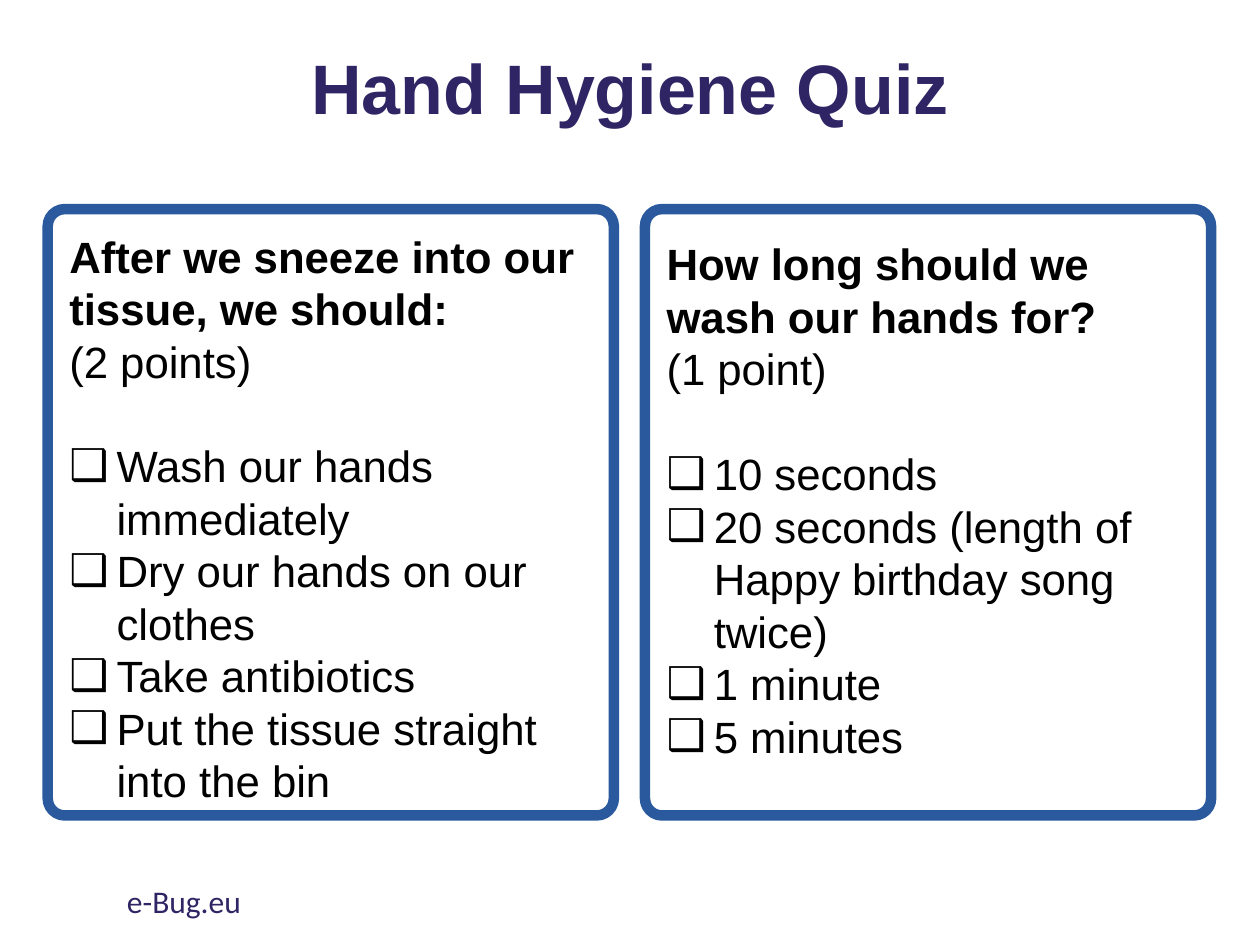
import dataclasses

import lxml.etree
import pptx
import pptx.dml.color
import pptx.enum.shapes
import pptx.enum.text
import pptx.oxml.ns
import pptx.util

Pt = pptx.util.Pt
Anchor = pptx.enum.text.MSO_ANCHOR
Align = pptx.enum.text.PP_ALIGN
AutoSize = pptx.enum.text.MSO_AUTO_SIZE


@dataclasses.dataclass(frozen=True)
class Theme:
    purple: str = "302564"
    blue: str = "2B599E"
    black: str = "000000"
    heading_font: str = "Arial"
    footer_font: str = "Calibri"
    title_size: float = 40
    body_size: float = 25
    footer_size: float = 18
    line_pitch: float = 30
    bullet_indent: float = 27
    bullet_tab: float = 36


def apply_format(target, values):
    for name, value in values.items():
        setattr(target, name, value)


class QuizSlide:
    def __init__(self, presentation, theme):
        self.theme = theme
        self.slide = presentation.slides.add_slide(presentation.slide_layouts[5])

    def add_text(self, paragraph, text, size, color, name, bold=False):
        run = paragraph.add_run()
        run.text = text
        apply_format(run.font, {"name": name, "size": Pt(size), "bold": bold})
        run.font.color.rgb = pptx.dml.color.RGBColor.from_string(color)

    def add_body_text(self, paragraph, text, bold=False):
        paragraph.line_spacing = Pt(self.theme.line_pitch)
        self.add_text(paragraph, text, self.theme.body_size, self.theme.black,
                      self.theme.heading_font, bold)

    def add_bullet(self, paragraph):
        properties = paragraph._p.get_or_add_pPr()
        indent = Pt(self.theme.bullet_indent)
        properties.set("marL", str(indent))
        properties.set("indent", str(-indent))
        qualify = pptx.oxml.ns.qn
        lxml.etree.SubElement(properties, qualify("a:buFont"), typeface=self.theme.heading_font)
        lxml.etree.SubElement(properties, qualify("a:buChar"), char="❑")
        tabs = lxml.etree.SubElement(properties, qualify("a:tabLst"))
        lxml.etree.SubElement(tabs, qualify("a:tab"),
                              pos=str(Pt(self.theme.bullet_tab)), algn="l")

    def add_title(self, text, left, top, width, height):
        title = self.slide.shapes.title
        apply_format(title, {"left": Pt(left), "top": Pt(top),
                             "width": Pt(width), "height": Pt(height)})
        apply_format(title.text_frame, {"vertical_anchor": Anchor.MIDDLE,
                                        "word_wrap": True, "auto_size": AutoSize.NONE})
        paragraph = title.text_frame.paragraphs[0]
        apply_format(paragraph, {"alignment": Align.CENTER, "line_spacing": 0.9})
        self.add_text(paragraph, text, self.theme.title_size, self.theme.purple,
                      self.theme.heading_font, True)

    def add_frame(self, left, top, width, height):
        frame = self.slide.shapes.add_shape(
            pptx.enum.shapes.MSO_SHAPE.ROUNDED_RECTANGLE,
            Pt(left), Pt(top), Pt(width), Pt(height))
        frame.adjustments[0] = 0.03
        frame.shadow.inherit = False
        frame.fill.background()
        frame.line.color.rgb = pptx.dml.color.RGBColor.from_string(self.theme.blue)
        frame.line.width = Pt(6)

    def add_text_box(self, left, top, width, height, auto_size=AutoSize.NONE):
        box = self.slide.shapes.add_textbox(Pt(left), Pt(top), Pt(width), Pt(height))
        apply_format(box.text_frame, {"word_wrap": True, "auto_size": auto_size})
        return box.text_frame

    def add_question(self, question, points, answers, left, top, width, height):
        text_frame = self.add_text_box(left, top, width, height, AutoSize.SHAPE_TO_FIT_TEXT)
        self.add_body_text(text_frame.paragraphs[0], question, True)
        self.add_body_text(text_frame.add_paragraph(), points)
        for index, answer in enumerate(answers):
            paragraph = text_frame.add_paragraph()
            self.add_bullet(paragraph)
            if index == 0:
                paragraph.space_before = Pt(self.theme.line_pitch)
            self.add_body_text(paragraph, answer)

    def add_footer(self, text, left, top, width, height):
        text_frame = self.add_text_box(left, top, width, height)
        self.add_text(text_frame.paragraphs[0], text, self.theme.footer_size,
                      self.theme.purple, self.theme.footer_font)


QUESTIONS = [
    ("After we sneeze into our tissue, we should:", "(2 points)",
     ["Wash our hands immediately", "Dry our hands on our clothes",
      "Take antibiotics", "Put the tissue straight into the bin"],
     (127.5, 317.5, 371)),
    ("How long should we wash our hands for?", "(1 point)",
     ["10 seconds", "20 seconds (length of Happy birthday song twice)",
      "1 minute", "5 minutes"],
     (132, 308, 310)),
]


def main():
    presentation = pptx.Presentation()
    apply_format(presentation, {"slide_width": Pt(720), "slide_height": Pt(540)})
    quiz = QuizSlide(presentation, Theme())
    quiz.add_title("Hand Hygiene Quiz", 49.5, 20, 621, 65.5)
    first_left, column_step, text_offset = 27.3, 341.3, 5.2
    for index, (question, points, answers, (top, width, height)) in enumerate(QUESTIONS):
        left = first_left + index * column_step
        quiz.add_frame(left, 119.5, 323.5, 346.5)
        quiz.add_question(question, points, answers, left + text_offset, top, width, height)
    quiz.add_footer("e-Bug.eu", 65.5, 500.5, 243.5, 29)
    presentation.save("out.pptx")


if __name__ == "__main__":
    main()
